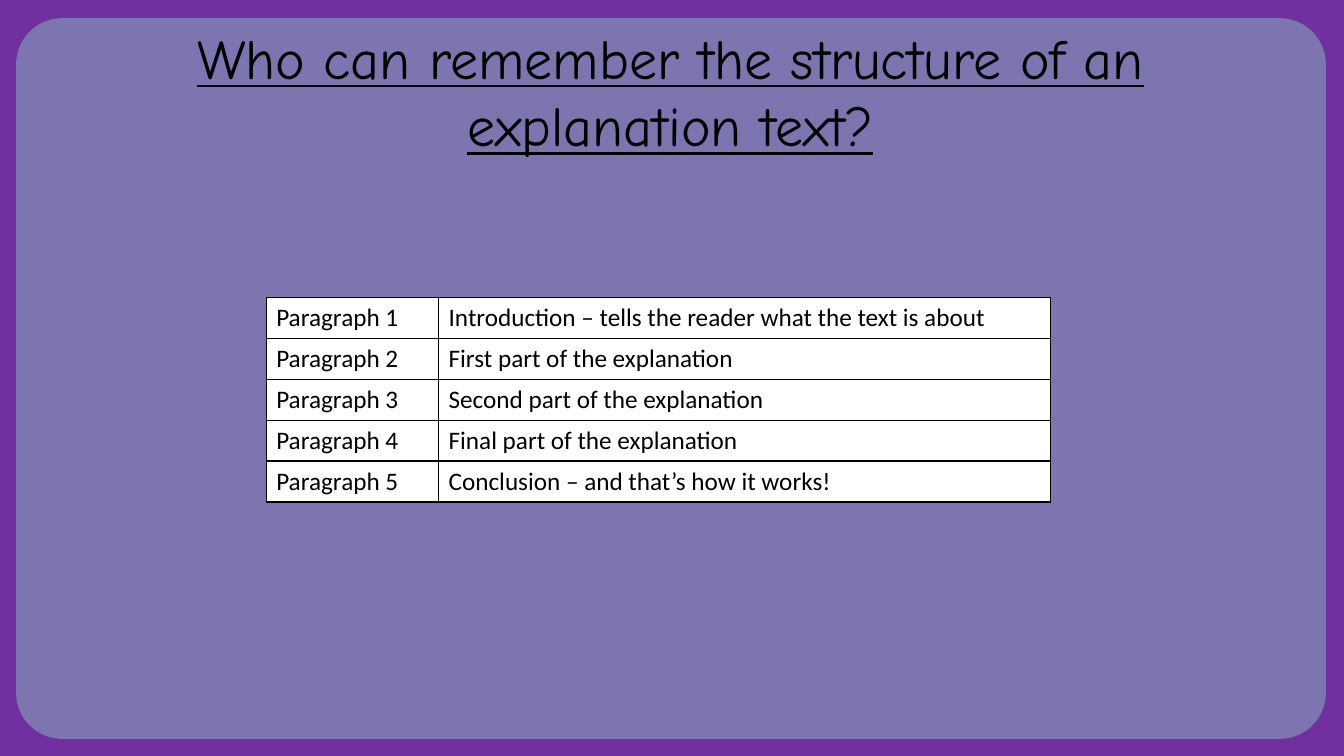
from lxml.etree import SubElement
from pptx import Presentation
from pptx.dml.color import RGBColor
from pptx.enum.shapes import MSO_SHAPE
from pptx.enum.text import MSO_ANCHOR, PP_ALIGN
from pptx.oxml.ns import qn
from pptx.util import Inches, Pt


def color(fmt, value):
    if hasattr(fmt, "solid"):
        fmt.solid()
        fmt = fmt.fore_color
    fmt.rgb = RGBColor.from_string(value)


def border(cell, value, width):
    tcPr = cell._tc.get_or_add_tcPr()
    for i, side in enumerate(("lnL", "lnR", "lnT", "lnB")):
        ln = tcPr.makeelement(qn("a:" + side), {"w": str(Pt(width))})
        fill = SubElement(ln, qn("a:solidFill"))
        SubElement(fill, qn("a:srgbClr"), val=value)
        tcPr.insert(i, ln)


prs = Presentation()
prs.slide_width, prs.slide_height = Inches(13.33), Inches(7.5)
s = prs.slides.add_slide(prs.slide_layouts[6])
color(s.background.fill, "7030A0")

panel = s.shapes.add_shape(MSO_SHAPE.ROUNDED_RECTANGLE, Inches(0.16), Inches(0.18),
                           Inches(12.99), Inches(7.15))
panel.adjustments[0] = 0.064
panel.shadow.inherit = False
color(panel.fill, "7D75AF")
panel.line.fill.background()

title = s.shapes.add_textbox(Inches(1.34), Inches(0.18), Inches(10.62), Inches(2.46))
tf = title.text_frame
tf.word_wrap = True
tf.vertical_anchor = MSO_ANCHOR.TOP
p = tf.paragraphs[0]
p.text = "Who can remember the structure of an explanation text?"
p.alignment = PP_ALIGN.CENTER
p.font.name, p.font.size = "Comic Neue", Pt(40)
p.font.underline = True
color(p.font.color, "000000")

parts = [
    "Introduction – tells the reader what the text is about",
    "First part of the explanation",
    "Second part of the explanation",
    "Final part of the explanation",
    "Conclusion – and that’s how it works!",
]
widths = [1.71, 6.07]
row_height = Inches(0.406)
table = s.shapes.add_table(len(parts), len(widths), Inches(2.64), Inches(2.95),
                           Inches(sum(widths)), row_height * len(parts)).table
for column, width in zip(table.columns, widths):
    column.width = Inches(width)
for i, part in enumerate(parts):
    table.rows[i].height = row_height
    for cell, text in zip(table.rows[i].cells, (f"Paragraph {i + 1}", part)):
        color(cell.fill, "FFFFFF")
        border(cell, "000000", 1)
        p = cell.text_frame.paragraphs[0]
        p.text = text
        p.font.name, p.font.size = "Calibri", Pt(18)
        p.font.bold = False
        color(p.font.color, "000000")

prs.save("out.pptx")
